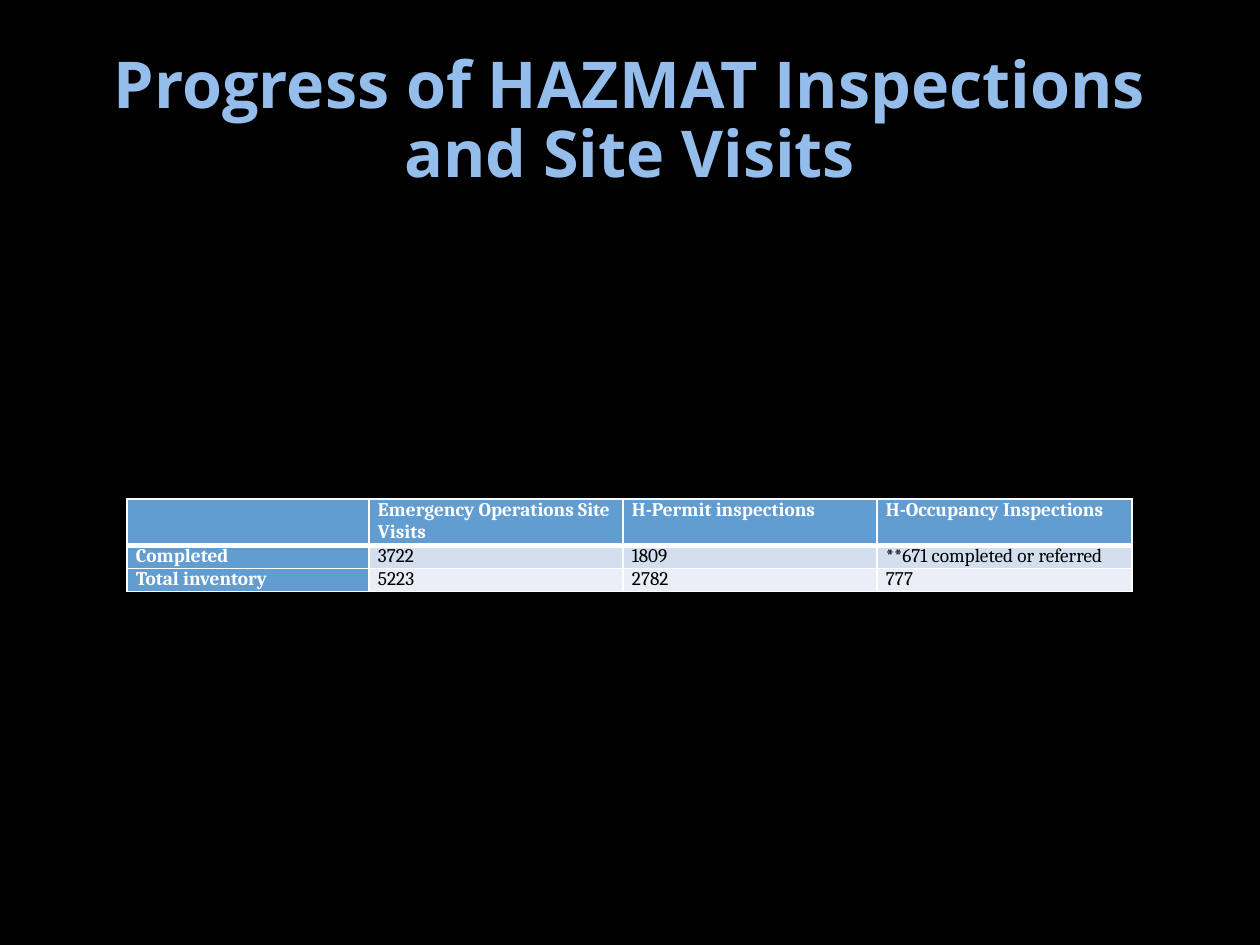
from lxml.etree import SubElement
from pptx import Presentation
from pptx.dml.color import RGBColor
from pptx.enum.text import MSO_ANCHOR as Anchor, PP_ALIGN as Align
from pptx.oxml.ns import qn
from pptx.util import Emu, Pt

BLACK = RGBColor(0x00, 0x00, 0x00)
WHITE = RGBColor(0xFF, 0xFF, 0xFF)
SKY = RGBColor(0x94, 0xBD, 0xEC)
BLUE = RGBColor(0x62, 0x9D, 0xD1)
BANDS = (RGBColor(0xD3, 0xDF, 0xEE), RGBColor(0xEA, 0xEF, 0xF7))

INSPECTIONS = (
    ("", "Emergency Operations Site Visits", "H-Permit inspections", "H-Occupancy Inspections"),
    ("Completed", "3722", "1809", "**671 completed or referred"),
    ("Total inventory", "5223", "2782", "777"),
)


def px(length):
    return Emu(round(length * 914400 / 126))


class InspectionSlide:
    title_font = "Open Sans"
    table_font = "Cambria"

    def __init__(self, deck):
        self.slide = deck.slides.add_slide(deck.slide_layouts[6])
        backdrop = self.slide.background.fill
        backdrop.solid()
        backdrop.fore_color.rgb = BLACK

    def add_text(self, paragraph, text, font, size, color, bold):
        run = paragraph.add_run()
        run.text = text
        run.font.name = font
        run.font.size = Pt(size)
        run.font.bold = bold
        run.font.color.rgb = color

    def title(self, text, left, top, width, height):
        frame = self.slide.shapes.add_textbox(px(left), px(top), px(width), px(height)).text_frame
        frame.word_wrap = True
        frame.vertical_anchor = Anchor.MIDDLE
        frame.margin_top, frame.margin_bottom = px(12), 0
        heading = frame.paragraphs[0]
        heading.alignment = Align.CENTER
        heading.line_spacing = 0.89
        self.add_text(heading, text, self.title_font, 36.9, SKY, True)

    def border(self, cell, bottom):
        properties = cell._tc.get_or_add_tcPr()
        widths = (("a:lnL", 1), ("a:lnR", 1), ("a:lnT", 1), ("a:lnB", bottom))
        for position, (side, points) in enumerate(widths):
            line = properties.makeelement(qn(side), {"w": str(Pt(points))})
            properties.insert(position, line)
            paint = SubElement(line, qn("a:solidFill"))
            SubElement(paint, qn("a:srgbClr"), val=str(WHITE))

    def table(self, rows, left, top, widths, heights):
        grid = self.slide.shapes.add_table(
            len(rows), len(widths), px(left), px(top), px(sum(widths)), px(sum(heights))
        ).table
        for column, width in zip(grid.columns, widths):
            column.width = px(width)
        for row, height in zip(grid.rows, heights):
            row.height = px(height)
        for r, labels in enumerate(rows):
            for c, label in enumerate(labels):
                cell = grid.cell(r, c)
                header = r == 0 or c == 0
                cell.margin_left = cell.margin_right = px(9)
                cell.margin_top = cell.margin_bottom = 0
                cell.fill.solid()
                cell.fill.fore_color.rgb = BLUE if header else BANDS[r - 1]
                self.border(cell, 3 if r == 0 else 1)
                paragraph = cell.text_frame.paragraphs[0]
                if label:
                    self.add_text(paragraph, label, self.table_font, 11,
                                  WHITE if header else BLACK, header)
                else:
                    paragraph.font.size = Pt(11)


def main():
    deck = Presentation()
    deck.slide_width, deck.slide_height = px(1260), px(945)
    page = InspectionSlide(deck)
    page.title("Progress of HAZMAT Inspections and Site Visits", 63, 38, 1134, 157)
    page.table(INSPECTIONS, 127, 499, (242, 254, 254, 255), (44, 23, 23))
    deck.save("out.pptx")


if __name__ == "__main__":
    main()
